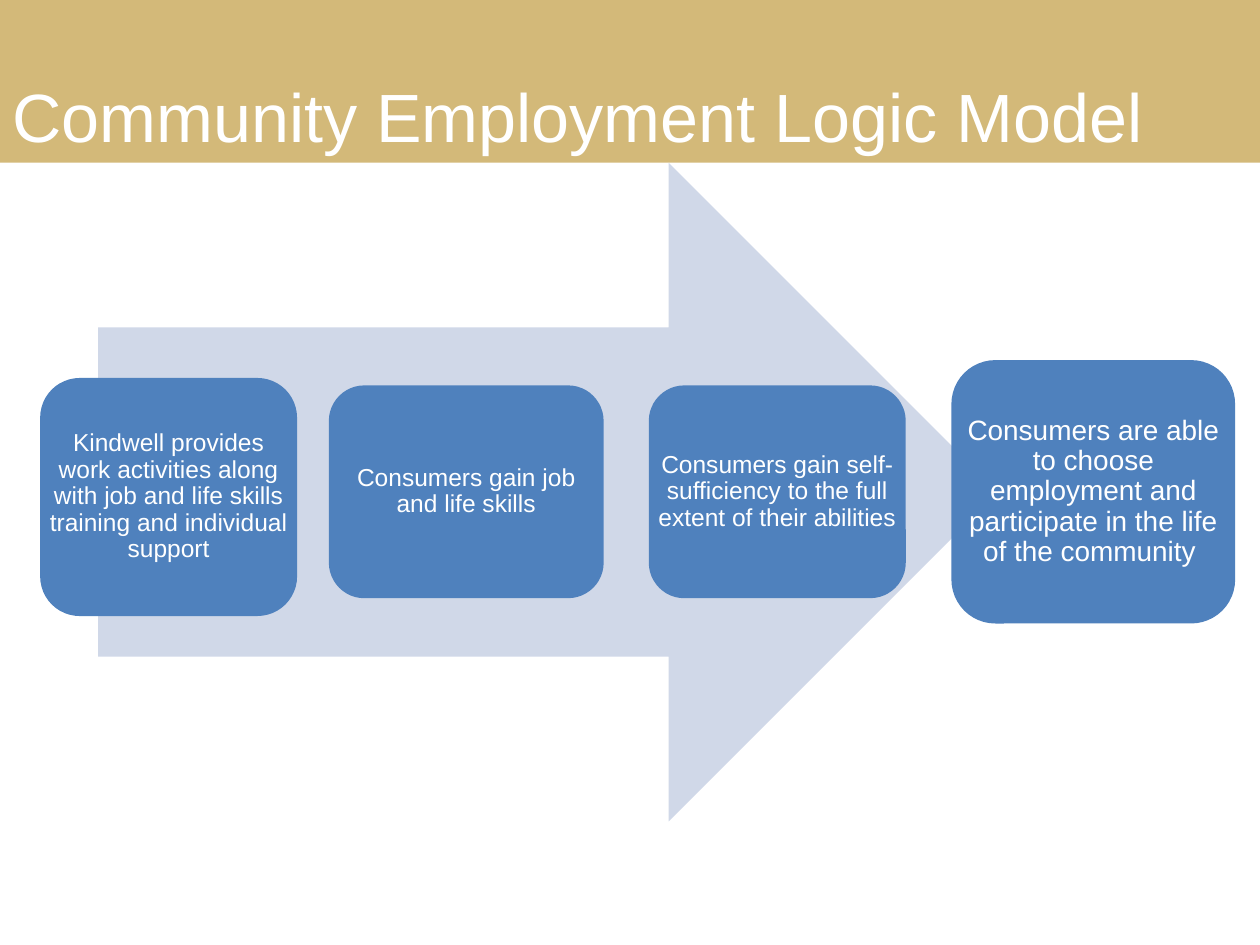
import pptx
import pptx.util
import pptx.dml.color
import pptx.enum.shapes
import pptx.enum.text

Cm = pptx.util.Cm
SHAPE = pptx.enum.shapes.MSO_SHAPE
ANCHOR = pptx.enum.text.MSO_ANCHOR
ALIGN = pptx.enum.text.PP_ALIGN


def paint(shape, color):
    shape.fill.solid()
    shape.fill.fore_color.rgb = pptx.dml.color.RGBColor.from_string(color)
    shape.line.fill.background()
    shape.shadow.inherit = False


def write(shape, text, size, color="FFFFFF", align=ALIGN.CENTER,
          anchor=ANCHOR.MIDDLE, spacing=0.9, side=0.15, edge=0.15):
    frame = shape.text_frame
    frame.word_wrap = True
    frame.auto_size = pptx.enum.text.MSO_AUTO_SIZE.NONE
    frame.vertical_anchor = anchor
    frame.margin_left = frame.margin_right = Cm(side)
    frame.margin_top = frame.margin_bottom = Cm(edge)
    para = frame.paragraphs[0]
    para.alignment = align
    para.line_spacing = spacing
    span = para.add_run()
    span.text = text
    span.font.name = "Arial"
    span.font.size = pptx.util.Pt(size)
    span.font.color.rgb = pptx.dml.color.RGBColor.from_string(color)


deck = pptx.Presentation()
deck.slide_width = Cm(25.4)
deck.slide_height = Cm(19.05)
page = deck.slides.add_slide(deck.slide_layouts[5])

title = page.shapes.title
title.left, title.top, title.width, title.height = Cm(0), Cm(-0.1), Cm(25.4), Cm(3.38)
paint(title, "D3B979")
write(title, "Community Employment Logic Model", 39, align=ALIGN.LEFT,
      anchor=ANCHOR.BOTTOM, spacing=1.0, side=0.25, edge=0.13)

arrow = page.shapes.add_shape(SHAPE.RIGHT_ARROW, Cm(1.98), Cm(3.28), Cm(18.14), Cm(13.28))
paint(arrow, "D0D8E8")

steps = [
    (0.81, 7.62, 5.18, 4.8, 14, 0.15,
     "Kindwell provides work activities along with job and life skills "
     "training and individual support"),
    (6.63, 7.77, 5.54, 4.29, 14, 0.15, "Consumers gain job and life skills"),
    (13.08, 7.77, 5.18, 4.29, 14, 0.15,
     "Consumers gain self-sufficiency to the full extent of their abilities "),
    (19.18, 7.26, 5.72, 5.31, 16, 0.18,
     "Consumers are able to choose employment and participate in the life "
     "of the community "),
]
for left, top, width, height, size, inset, text in steps:
    place = Cm(left), Cm(top), Cm(width), Cm(height)
    paint(page.shapes.add_shape(SHAPE.ROUNDED_RECTANGLE, *place), "4F81BD")
    write(page.shapes.add_textbox(*place), text, size, side=inset, edge=inset)

deck.save("out.pptx")
